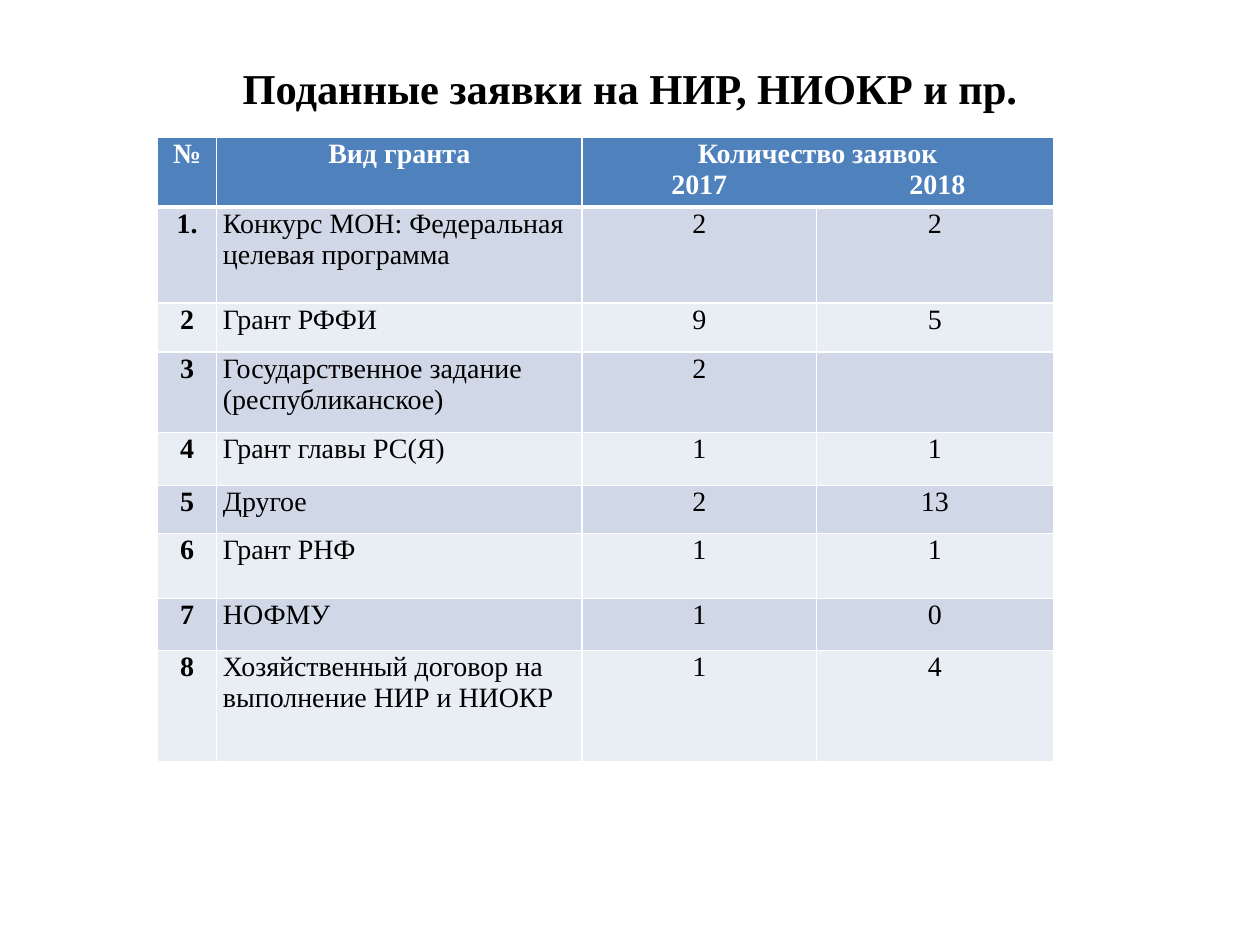
"""Build the slide that tables the grant applications of 2017 and 2018."""
from lxml import etree
from pptx import Presentation
from pptx.dml.color import RGBColor
from pptx.enum import text
from pptx.oxml import ns
from pptx.util import Inches, Pt

COLORS = {"header": "4F81BD", "odd": "D0D8E8", "even": "E9EDF4", "white": "FFFFFF", "black": "000000"}
CENTER, LEFT = text.PP_ALIGN.CENTER, text.PP_ALIGN.LEFT


def write(paragraph, words, size=16, bold=False, color="black", align=CENTER):
    paragraph.alignment = align
    run = paragraph.add_run()
    run.text = words
    run.font.name = "Times New Roman"
    run.font.size = Pt(size)
    run.font.bold = bold
    run.font.color.rgb = RGBColor.from_string(COLORS[color])


def style_cell(cell, fill, top=1, bottom=1):
    cell.margin_left = cell.margin_right = Inches(0.05)
    cell.margin_top = cell.margin_bottom = Inches(0.01)
    properties = cell._tc.get_or_add_tcPr()
    for side, width in (("L", 1), ("R", 1), ("T", top), ("B", bottom)):
        line = etree.SubElement(properties, ns.qn(f"a:ln{side}"), w=str(Pt(width)))
        solid = etree.SubElement(line, ns.qn("a:solidFill"))
        etree.SubElement(solid, ns.qn("a:srgbClr"), val=COLORS["white"])
    cell.fill.solid()
    cell.fill.fore_color.rgb = RGBColor.from_string(COLORS[fill])


presentation = Presentation()
presentation.slide_width, presentation.slide_height = Inches(10), Inches(7.5)
slide = presentation.slides.add_slide(presentation.slide_layouts[6])

title = slide.shapes.add_textbox(Inches(0.5), Inches(0.3), Inches(9), Inches(0.79)).text_frame
title.word_wrap = True
title.vertical_anchor = text.MSO_ANCHOR.MIDDLE
write(title.paragraphs[0], "Поданные заявки на НИР, НИОКР и пр.", size=24.3, bold=True)

applications = [
    ("1.", "Конкурс МОН: Федеральная целевая программа", "2", "2"),
    ("2", "Грант РФФИ", "9", "5"),
    ("3", "Государственное задание (республиканское)", "2", ""),
    ("4", "Грант главы РС(Я)", "1", "1"),
    ("5", "Другое", "2", "13"),
    ("6", "Грант РНФ", "1", "1"),
    ("7", "НОФМУ", "1", "0"),
    ("8", "Хозяйственный договор на выполнение НИР и НИОКР", "1", "4"),
]
column_widths = [0.47, 2.9, 1.86, 1.88]
row_heights = [0.5, 0.76, 0.39, 0.64, 0.42, 0.38, 0.52, 0.41, 0.88]

grants = slide.shapes.add_table(
    len(row_heights), len(column_widths), Inches(1.25), Inches(1.09),
    Inches(sum(column_widths)), Inches(sum(row_heights))).table
for column, width in zip(grants.columns, column_widths):
    column.width = Inches(width)
for row, height in zip(grants.rows, row_heights):
    row.height = Inches(height)

for column in range(len(column_widths)):
    style_cell(grants.cell(0, column), "header", bottom=3)
grants.cell(0, 2).merge(grants.cell(0, 3))
for column, heading in enumerate(["№", "Вид гранта", "Количество заявок"]):
    write(grants.cell(0, column).text_frame.paragraphs[0], heading, bold=True, color="white")

years = grants.cell(0, 2).text_frame.add_paragraph()
write(years, "\t2017\t2018", bold=True, color="white", align=LEFT)
tabs = etree.SubElement(years._p.get_or_add_pPr(), ns.qn("a:tabLst"))
for position in (0.88, 2.77):
    etree.SubElement(tabs, ns.qn("a:tab"), pos=str(Inches(position)), algn="ctr")

for row, application in enumerate(applications, start=1):
    for column, words in enumerate(application):
        cell = grants.cell(row, column)
        style_cell(cell, "odd" if row % 2 else "even", top=3 if row == 1 else 1)
        if words:
            write(cell.text_frame.paragraphs[0], words, bold=column == 0,
                  align=LEFT if column == 1 else CENTER)

presentation.save("out.pptx")
